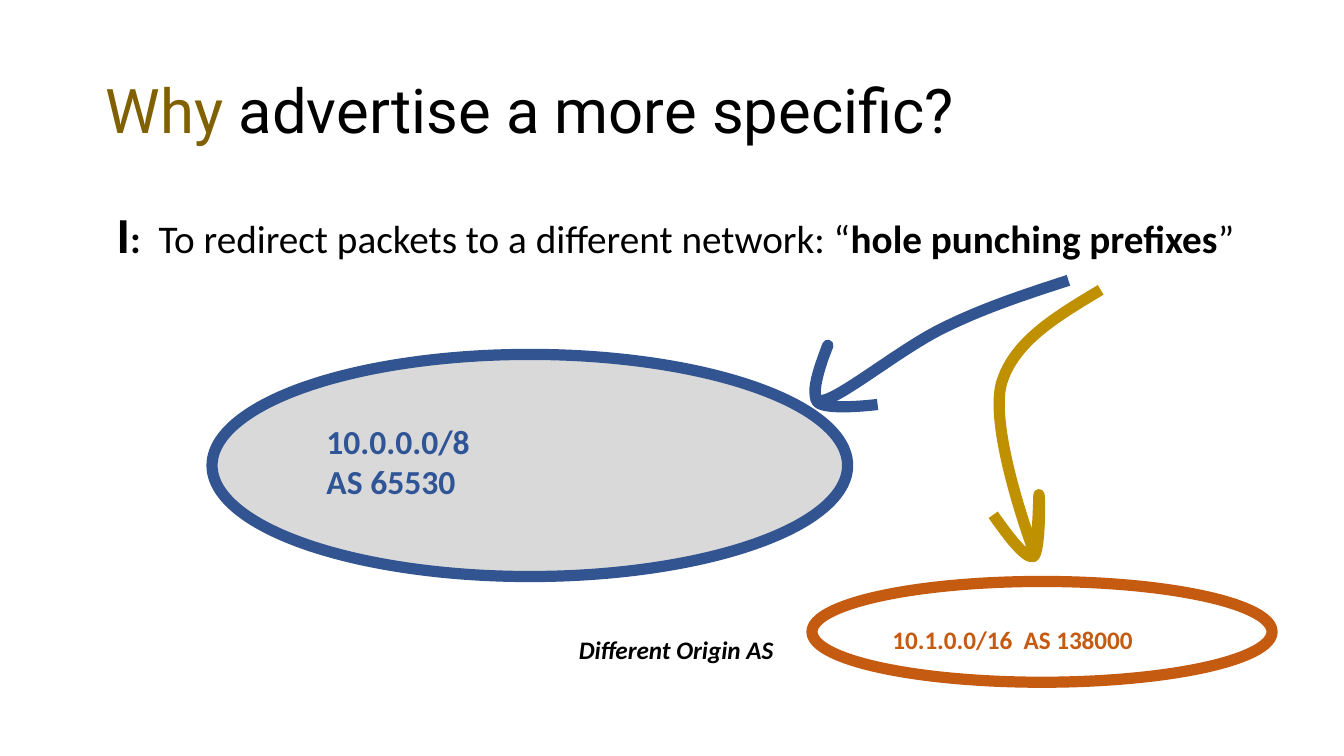
from lxml import etree
from pptx import Presentation
from pptx import util as u
from pptx.dml.color import RGBColor
from pptx.enum import shapes, text
from pptx.oxml import ns

Pt = u.Pt
COLORS = {
    "black": "000000", "white": "FFFFFF", "grey": "D9D9D9",
    "olive": "806000", "gold": "BF9000", "orange": "C55A11",
    "blue": "325491", "label_blue": "2F5597",
}

# Each arrow: start point, then curves of two control points and an end point
BLUE_ARROW = [
    (572.4, 150.2),
    (549.4, 157.7), (527, 165), (505.4, 175.7),
    (483.1, 186.5), (450.7, 213.1), (440.6, 214.6),
    (429.8, 216), (444.2, 184.3), (443.5, 185),
    (443.5, 185), (433.4, 209.5), (437.8, 215.3),
    (442.1, 220.3), (470.2, 216.7), (470.2, 216.7),
]
GOLD_ARROW = [
    (589.7, 155.3),
    (566.6, 169.2), (542.9, 182.9), (536.4, 205.9),
    (530.6, 229), (549.4, 283), (553, 293),
    (555.8, 302.4), (556.6, 264.2), (556.6, 265),
    (557.3, 265.7), (557.3, 295.9), (553.7, 298.1),
    (549.4, 299.5), (540.7, 288), (532.1, 275.8),
]


def rgb(name):
    return RGBColor.from_string(COLORS[name])


def place(sp, box):
    for side, value in zip(("left", "top", "width", "height"), box):
        setattr(sp, side, Pt(value))


def add_run(p, words, size, color="black", font="Calibri", **fmt):
    r = p.add_run()
    r.text = words
    for key, value in {"name": font, "size": Pt(size), **fmt}.items():
        setattr(r.font, key, value)
    r.font.color.rgb = rgb(color)


def add_text(s, box, wrap=False):
    tf = s.shapes.add_textbox(*map(Pt, box)).text_frame
    tf.word_wrap = wrap
    return tf


def add_label(s, box, lines, size, color, **fmt):
    tf = add_text(s, box)
    tf.auto_size = text.MSO_AUTO_SIZE.SHAPE_TO_FIT_TEXT
    for i, line in enumerate(lines):
        p = tf.add_paragraph() if i else tf.paragraphs[0]
        add_run(p, line, size, color, bold=True, **fmt)


def outline(sp, color):
    sp.shadow.inherit = False
    sp.line.color.rgb = rgb(color)
    sp.line.width = Pt(6)


def add_ellipse(s, box, fill, line):
    sp = s.shapes.add_shape(shapes.MSO_SHAPE.OVAL, *map(Pt, box))
    sp.fill.solid()
    sp.fill.fore_color.rgb = rgb(fill)
    outline(sp, line)


def add_hand_arrow(s, nodes, color):
    builder = s.shapes.build_freeform(*map(Pt, nodes[0]))
    builder.add_line_segments([tuple(map(Pt, n)) for n in nodes[3::3]], close=False)
    sp = builder.convert_to_shape()
    sp.fill.background()
    outline(sp, color)
    # Turn each straight segment into a cubic curve
    for i, seg in enumerate(sp._element.findall(".//" + ns.qn("a:lnTo"))):
        seg.tag = ns.qn("a:cubicBezTo")
        curve = etree.Element(ns.qn("a:cubicBezTo"))
        for x, y in nodes[3 * i + 1:3 * i + 4]:
            etree.SubElement(curve, ns.qn("a:pt"),
                             x=str(Pt(x) - sp.left), y=str(Pt(y) - sp.top))
        seg.getparent().replace(seg, curve)


def set_title(s):
    title = s.shapes.title
    place(title, (49.5, 21.6, 621, 78.3))
    tf = title.text_frame
    tf.auto_size = text.MSO_AUTO_SIZE.NONE
    tf.vertical_anchor = text.MSO_ANCHOR.MIDDLE
    p = tf.paragraphs[0]
    p.alignment = text.PP_ALIGN.LEFT
    p.line_spacing = 0.9
    add_run(p, "Why", 33, "olive", "Roboto")
    add_run(p, " advertise a more specific?", 33, font="Roboto")


def add_reason(s):
    p = add_text(s, (55.4, 108.7, 621, 257), wrap=True).paragraphs[0]
    p.line_spacing = 0.9
    p.space_before = Pt(7.5)
    for words, size, bold in (
            ("I", 27, True), (": ", 21, True),
            (" To redirect packets to a different network: “", 21, False),
            ("hole punching prefixes", 21, True), ("”", 21, False)):
        add_run(p, words, size, bold=bold)


def main():
    prs = Presentation()
    prs.slide_width, prs.slide_height = Pt(720), Pt(405)
    s = prs.slides.add_slide(prs.slide_layouts[5])

    # Heading and reason
    set_title(s)
    add_reason(s)

    # Networks
    add_ellipse(s, (113.6, 189.9, 340.5, 119), "grey", "blue")
    add_label(s, (167.8, 221.8, 95, 51), ("10.0.0.0/8", "AS 65530"), 18, "label_blue")
    add_ellipse(s, (435, 311.5, 246.5, 54), "white", "orange")
    add_label(s, (471, 330.8, 157.7, 23.8), ("10.1.0.0/16  AS 138000",), 13.5, "orange")

    # Arrows from the phrase to the networks
    add_hand_arrow(s, BLUE_ARROW, "blue")
    add_hand_arrow(s, GOLD_ARROW, "gold")

    add_label(s, (303, 336.2, 120.2, 23.8), ("Different Origin AS",), 13.5, "black", italic=True)
    prs.save("out.pptx")


if __name__ == "__main__":
    main()
